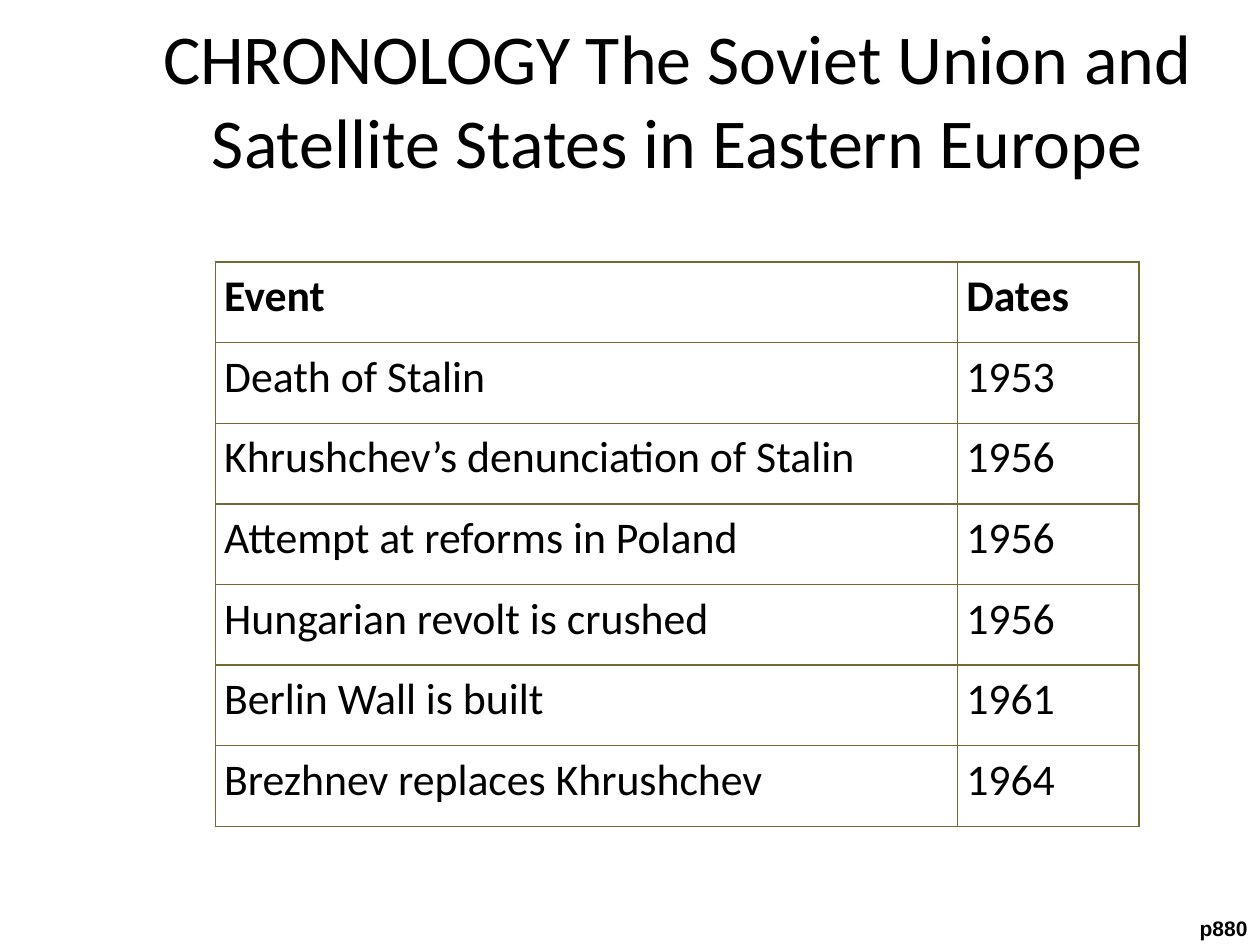
from dataclasses import dataclass
from typing import NamedTuple

import pptx
import pptx.dml.color
import pptx.enum.text
import pptx.oxml
import pptx.oxml.ns
import pptx.util
from pptx.util import Inches

ANCHOR = pptx.enum.text.MSO_ANCHOR
ALIGN = pptx.enum.text.PP_ALIGN


@dataclass(frozen=True)
class Theme:
    text: str = "000000"
    border: str = "746833"
    border_pt: float = 1
    heading_font: str = "Calibri"
    label_font: str = "Arial"
    title_pt: float = 40
    table_pt: float = 25
    label_pt: float = 12


class Event(NamedTuple):
    name: str
    date: str


class Box(NamedTuple):
    left: float
    top: float
    width: float
    height: float


THEME = Theme()
HEADER = Event("Event", "Dates")
EVENTS = [
    Event("Death of Stalin", "1953"),
    Event("Khrushchev’s denunciation of Stalin", "1956"),
    Event("Attempt at reforms in Poland", "1956"),
    Event("Hungarian revolt is crushed", "1956"),
    Event("Berlin Wall is built", "1961"),
    Event("Brezhnev replaces Khrushchev", "1964"),
]
COLUMN_WIDTHS = (5.89, 1.44)
ROW_HEIGHT = 0.64


def write(tf, text: str, font: str, size: float, bold: bool = False,
          **paragraph_format) -> None:
    p = tf.paragraphs[0]
    for name, value in paragraph_format.items():
        setattr(p, name, value)
    r = p.add_run()
    r.text = text
    for name, value in dict(name=font, size=pptx.util.Pt(size), bold=bold).items():
        setattr(r.font, name, value)
    r.font.color.rgb = pptx.dml.color.RGBColor.from_string(THEME.text)


def add_text(s, box: Box, text: str, font: str, size: float, align,
             bold: bool = False, **frame_format) -> None:
    tf = s.shapes.add_textbox(*map(Inches, box)).text_frame
    for name, value in frame_format.items():
        setattr(tf, name, value)
    write(tf, text, font, size, bold, alignment=align)


def set_borders(cell) -> None:
    """Rule all four sides; lines must come before the cell's fill."""
    tc_pr = cell._tc.get_or_add_tcPr()
    width = pptx.util.Pt(THEME.border_pt)
    for i, side in enumerate(("lnL", "lnR", "lnT", "lnB")):
        tc_pr.insert(i, pptx.oxml.parse_xml(
            f'<a:{side} {pptx.oxml.ns.nsdecls("a")} w="{width}"><a:solidFill>'
            f'<a:srgbClr val="{THEME.border}"/></a:solidFill></a:{side}>'))


def add_chronology(s, left: float, top: float) -> None:
    rows = [HEADER, *EVENTS]
    table = s.shapes.add_table(
        len(rows), len(COLUMN_WIDTHS), Inches(left), Inches(top),
        Inches(sum(COLUMN_WIDTHS)), Inches(ROW_HEIGHT * len(rows))).table
    table.horz_banding = False
    for column, width in zip(table.columns, COLUMN_WIDTHS):
        column.width = Inches(width)
    margins = dict(margin_left=0.07, margin_right=0.07,
                   margin_top=0, margin_bottom=0)
    for row, event in zip(table.rows, rows):
        row.height = Inches(ROW_HEIGHT)
        for cell, text in zip(row.cells, event):
            for name, value in margins.items():
                setattr(cell, name, Inches(value))
            cell.fill.background()
            set_borders(cell)
            write(cell.text_frame, text, THEME.heading_font, THEME.table_pt,
                  bold=event is HEADER, line_spacing=1.15)


def main() -> None:
    prs = pptx.Presentation()
    prs.slide_width, prs.slide_height = Inches(10), Inches(7.5)
    s = prs.slides.add_slide(prs.slide_layouts[6])
    add_text(s, Box(0.75, 0.53, 9.25, 0.5),
             "CHRONOLOGY The Soviet Union and Satellite States in Eastern Europe",
             THEME.heading_font, THEME.title_pt, ALIGN.CENTER,
             word_wrap=True, vertical_anchor=ANCHOR.MIDDLE)
    add_text(s, Box(9.37, 7.22, 0.63, 0.3), "p880",
             THEME.label_font, THEME.label_pt, ALIGN.RIGHT, bold=True,
             word_wrap=False)
    add_chronology(s, 1.71, 2.08)
    prs.save("out.pptx")


if __name__ == "__main__":
    main()
